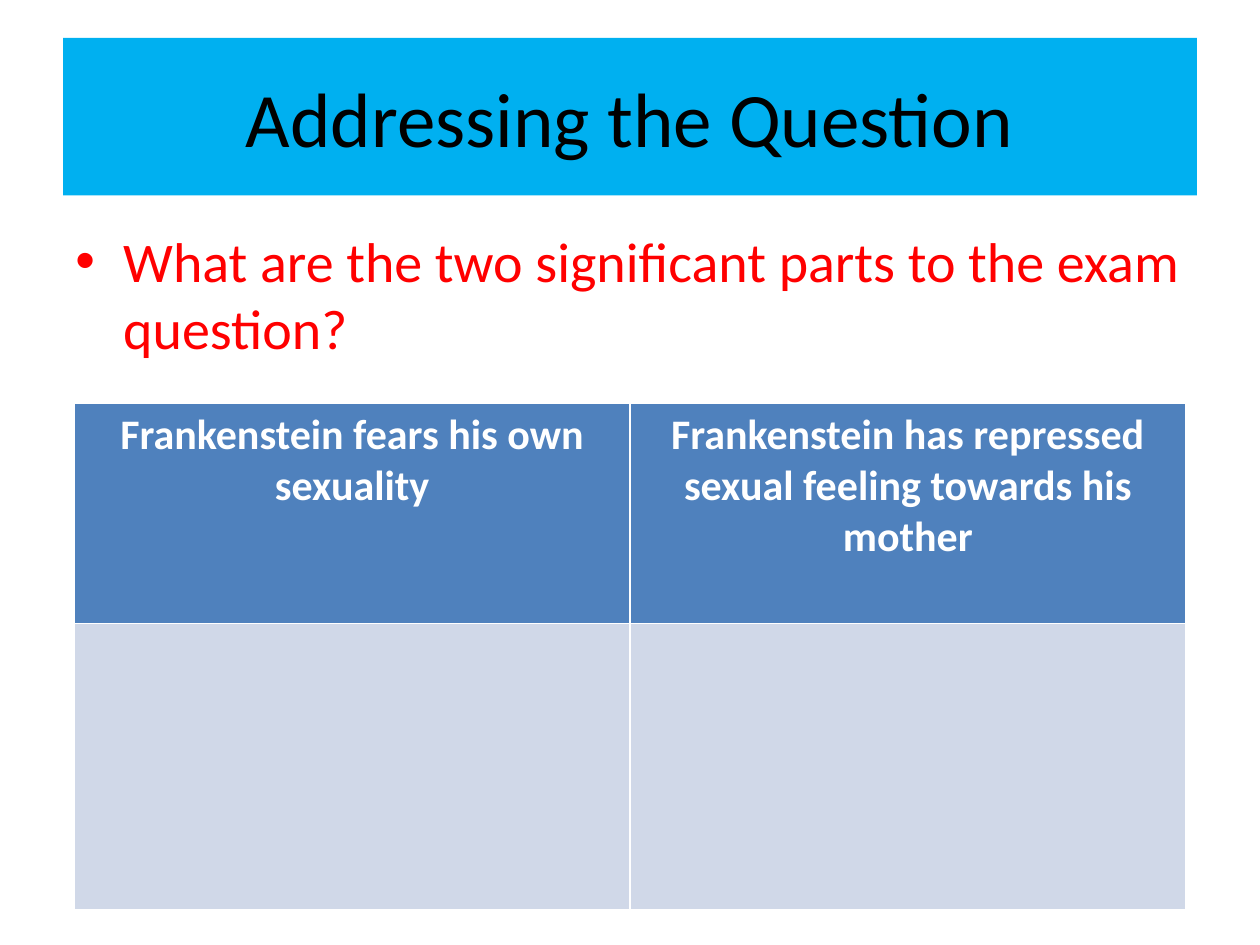
import pptx
import pptx.dml.color
import pptx.enum.text
import pptx.oxml
import pptx.oxml.ns
import pptx.util

RGBColor = pptx.dml.color.RGBColor
BLACK = RGBColor(0x00, 0x00, 0x00)
WHITE = RGBColor(0xFF, 0xFF, 0xFF)
RED = RGBColor(0xFF, 0x00, 0x00)
SKY = RGBColor(0x00, 0xB0, 0xF0)
HEADER_BLUE = RGBColor(0x4F, 0x81, 0xBD)
PALE_BLUE = RGBColor(0xD0, 0xD8, 0xE8)

Align = pptx.enum.text.PP_ALIGN
Anchor = pptx.enum.text.MSO_ANCHOR


class SlideBuilder:
    font = "Calibri"
    columns = 20
    rows = 30

    def __init__(self, deck):
        self.width = deck.slide_width
        self.height = deck.slide_height
        self.slide = deck.slides.add_slide(deck.slide_layouts[5])

    def across(self, columns):
        return round(self.width * columns / self.columns)

    def down(self, rows):
        return round(self.height * rows / self.rows)

    def area(self, column, row, columns, rows):
        return self.across(column), self.down(row), self.across(columns), self.down(rows)

    def set_text(self, frame, text, size, color, align, bold=False):
        frame.text = text
        para = frame.paragraphs[0]
        para.alignment = align
        for span in para.runs:
            span.font.name = self.font
            span.font.size = pptx.util.Pt(size)
            span.font.color.rgb = color
            span.font.bold = bold
        return para

    def title(self, text, *cells):
        box = self.slide.shapes.title
        box.left, box.top, box.width, box.height = self.area(*cells)
        box.fill.solid()
        box.fill.fore_color.rgb = SKY
        box.text_frame.vertical_anchor = Anchor.MIDDLE
        self.set_text(box.text_frame, text, 44, BLACK, Align.CENTER)

    def bullet(self, text, *cells):
        box = self.slide.shapes.add_textbox(*self.area(*cells))
        box.text_frame.word_wrap = True
        para = self.set_text(box.text_frame, text, 32, RED, Align.LEFT)
        para.space_before = pptx.util.Pt(6.4)
        indent = pptx.util.Inches(0.38)
        properties = para._p.get_or_add_pPr()
        properties.set("marL", str(indent))
        properties.set("indent", str(-indent))
        namespace = pptx.oxml.ns.nsdecls("a")
        properties.append(pptx.oxml.parse_xml(f'<a:buFont {namespace} typeface="Arial"/>'))
        properties.append(pptx.oxml.parse_xml(f'<a:buChar {namespace} char="•"/>'))

    def table(self, headings, row_heights, *cells):
        frame = self.slide.shapes.add_table(len(row_heights), len(headings), *self.area(*cells))
        table = frame.table
        table.horz_banding = False
        for row, height in zip(table.rows, row_heights):
            row.height = self.down(height)
        for column, heading in enumerate(headings):
            header = table.cell(0, column)
            self.set_text(header.text_frame, heading, 24, WHITE, Align.CENTER, bold=True)
            for row in range(len(row_heights)):
                cell = table.cell(row, column)
                cell.fill.solid()
                cell.fill.fore_color.rgb = PALE_BLUE if row else HEADER_BLUE


def main():
    deck = pptx.Presentation()
    deck.slide_width = pptx.util.Inches(10)
    deck.slide_height = pptx.util.Inches(7.5)
    page = SlideBuilder(deck)
    page.title("Addressing the Question", 1, 1.2, 18, 5)
    page.bullet("What are the two significant parts to the exam question?", 1, 7, 18, 5.48)
    page.table(
        [
            "Frankenstein fears his own sexuality",
            "Frankenstein has repressed sexual feeling towards his mother",
        ],
        [7, 9.08],
        1.18, 12.8, 17.64, 16.08,
    )
    deck.save("out.pptx")


if __name__ == "__main__":
    main()
